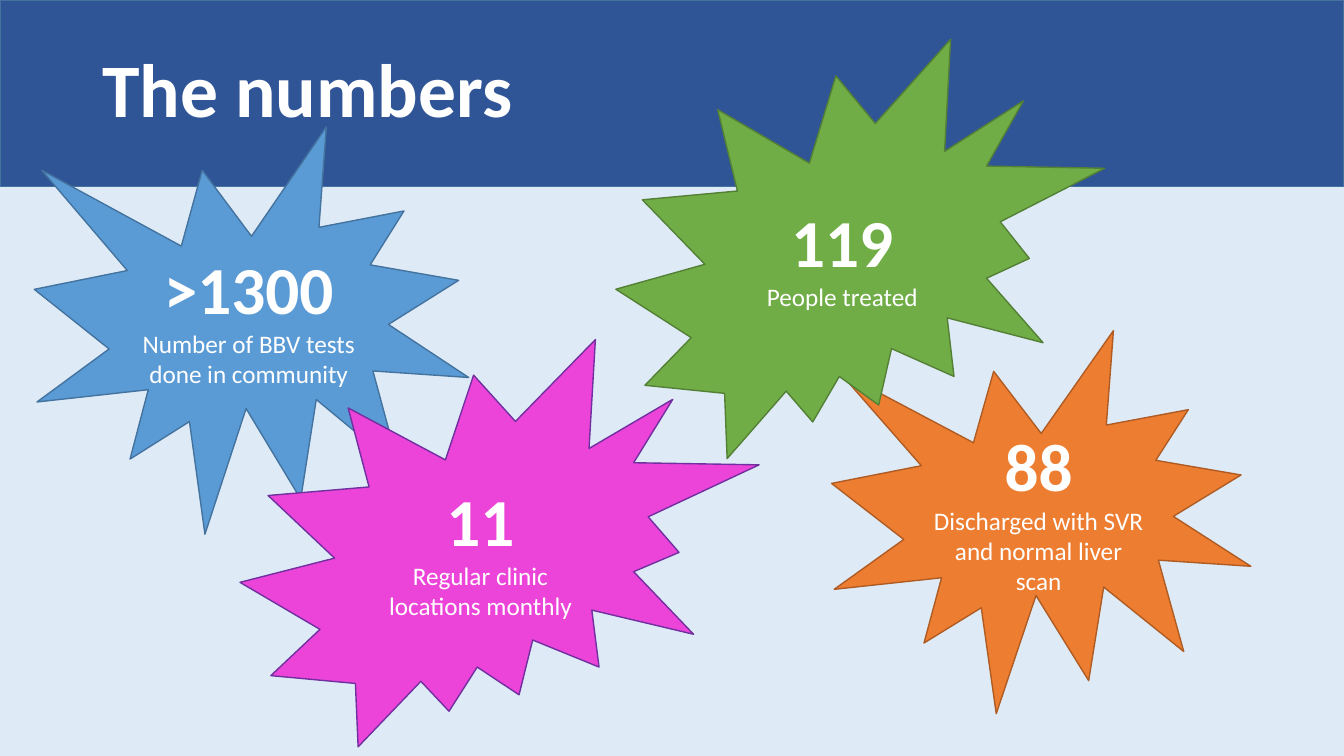
"""Builds a slide of four headline figures in starbursts under a title band."""
from pptx import Presentation
from pptx.dml.color import RGBColor
from pptx.enum.shapes import MSO_SHAPE as Preset
from pptx.enum.text import MSO_ANCHOR as Anchor, PP_ALIGN as Align
from pptx.util import Pt

WIDTH, HEIGHT = 960, 540
BACKGROUND, WHITE = "DEEBF7", "FFFFFF"
BAND_FILL, BAND_LINE = "2F5597", "43739E"
TITLE = "The numbers"
BURSTS = [
    (Preset.EXPLOSION1, (24.5, 90.7, 310.3, 290.9), "5B9BD5", "43739E",
     ">1300", "Number of BBV tests done in community"),
    (Preset.EXPLOSION1, (594, 236.2, 299.5, 273.6), "ED7D31", "AF5C24",
     "88", "Discharged with SVR and normal liver scan"),
    (Preset.EXPLOSION2, (439.9, 28.1, 349.2, 299.5), "70AD47", "538035",
     "119", "People treated"),
    (Preset.EXPLOSION2, (171.4, 242.6, 370.8, 290.9), "EC44D8", "7030A0",
     "11", "Regular clinic locations monthly"),
]


def color(target, value):
    target.rgb = RGBColor.from_string(value)


def add_solid(page, preset, place, fill, line):
    shape = page.shapes.add_shape(preset, *map(Pt, place))
    shape.shadow.inherit = False
    shape.fill.solid()
    color(shape.fill.fore_color, fill)
    color(shape.line.color, line)
    shape.line.width = Pt(1)
    return shape


def write(para, words, size, bold):
    para.text = words
    font = para.runs[0].font
    font.name, font.size, font.bold = "Calibri", Pt(size), bold
    color(font.color, WHITE)


def add_title(page):
    box = page.shapes.add_textbox(*map(Pt, (66, 14.4, 828, 104.4)))
    frame = box.text_frame
    frame.word_wrap = True
    frame.vertical_anchor = Anchor.MIDDLE
    write(frame.paragraphs[0], TITLE, 54, True)
    frame.paragraphs[0].line_spacing = 0.9


def add_burst(page, preset, place, fill, line, figure, caption):
    frame = add_solid(page, preset, place, fill, line).text_frame
    frame.word_wrap = True
    frame.vertical_anchor = Anchor.MIDDLE
    write(frame.paragraphs[0], figure, 48, True)
    write(frame.add_paragraph(), caption, 18, False)
    for para in frame.paragraphs:
        para.alignment = Align.CENTER


def main():
    deck = Presentation()
    deck.slide_width, deck.slide_height = Pt(WIDTH), Pt(HEIGHT)
    page = deck.slides.add_slide(deck.slide_layouts[6])
    page.background.fill.solid()
    color(page.background.fill.fore_color, BACKGROUND)
    add_solid(page, Preset.RECTANGLE, (0, 0, WIDTH, 133.2), BAND_FILL, BAND_LINE)
    add_title(page)
    for burst in BURSTS:
        add_burst(page, *burst)
    deck.save("out.pptx")


if __name__ == "__main__":
    main()
